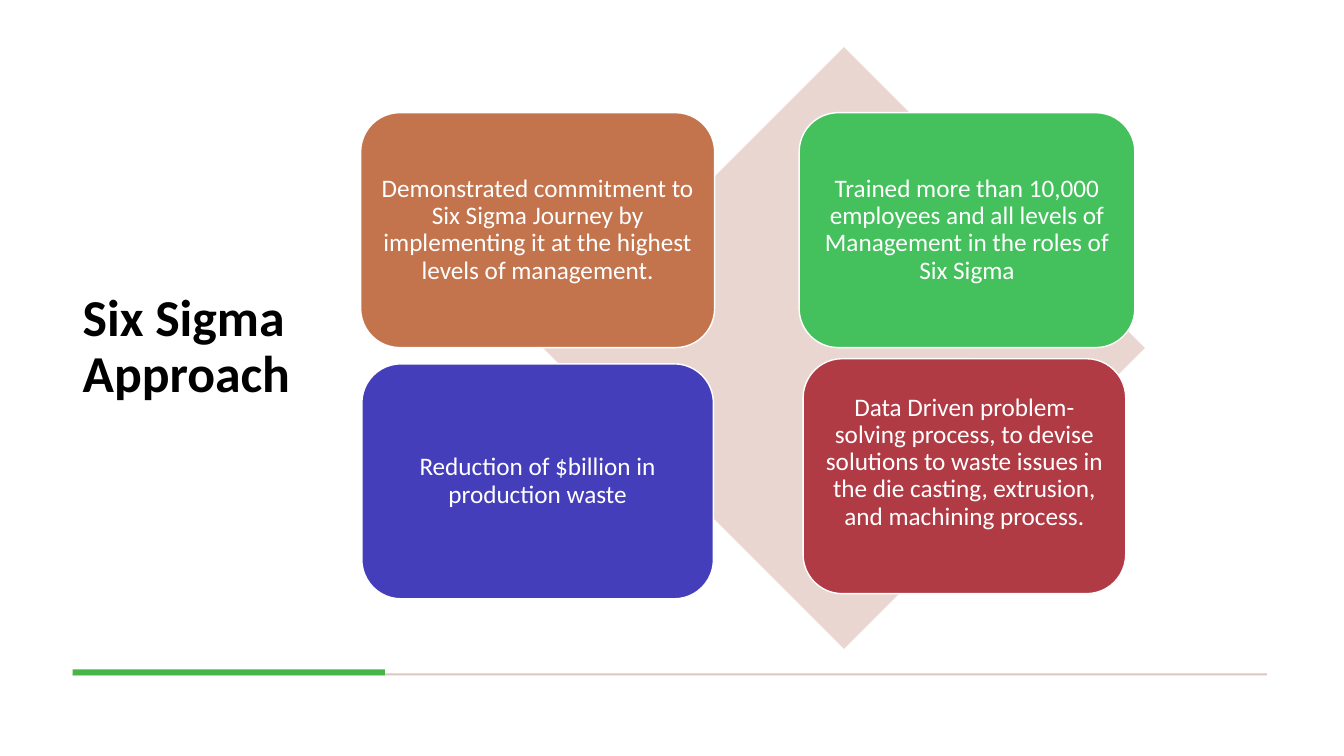
from pptx import Presentation
from pptx.dml.color import RGBColor
from pptx.enum import shapes, text
from pptx.util import Cm, Pt

FONT = "Calibri"
CARD_HEIGHT = 5.92
CARDS = [
    (9.09, 2.84, 8.92, "C3744D", 0.18,
     "Demonstrated commitment to Six Sigma Journey by implementing it "
     "at the highest levels of management."),
    (20.14, 2.84, 8.46, "44C05C", 0.18,
     "Trained more than 10,000 employees and all levels of Management "
     "in the roles of Six Sigma"),
    (9.12, 9.17, 8.86, "453EBA", 0.18,
     "Reduction of $billion in production waste"),
    (20.24, 9.04, 8.13, "B13B45", 0.87,
     "Data Driven problem-solving process, to devise solutions to waste "
     "issues in the die casting, extrusion, and machining process."),
]


def paint(color_format, value):
    """Set a colour from a hex string."""
    color_format.rgb = RGBColor.from_string(value)


def style_paragraph(para, size, color, bold=False):
    """Set the font and line spacing of a paragraph."""
    para.line_spacing = 0.9
    para.font.name = FONT
    para.font.size = Pt(size)
    para.font.bold = bold
    paint(para.font.color, color)


def add_block(page, kind, left, top, width, height, fill):
    """Add a flat filled shape without an outline, placed in centimetres."""
    block = page.shapes.add_shape(kind, Cm(left), Cm(top), Cm(width), Cm(height))
    block.shadow.inherit = False
    block.fill.solid()
    paint(block.fill.fore_color, fill)
    block.line.fill.background()
    return block


def add_card(page, left, top, width, fill, bottom_inset, wording):
    """Add a rounded card with a white outline and centred text."""
    card = add_block(page, shapes.MSO_SHAPE.ROUNDED_RECTANGLE,
                     left, top, width, CARD_HEIGHT, fill)
    card.line.width = Pt(1)
    paint(card.line.color, "FFFFFF")
    frame = card.text_frame
    frame.word_wrap = True
    frame.vertical_anchor = text.MSO_ANCHOR.MIDDLE
    frame.margin_left = frame.margin_right = frame.margin_top = Cm(0.18)
    frame.margin_bottom = Cm(bottom_inset)
    para = frame.paragraphs[0]
    para.text = wording
    para.alignment = text.PP_ALIGN.CENTER
    style_paragraph(para, 18, "FFFFFF")


def set_title(page, wording):
    """Place and format the title at the left of the slide."""
    title = page.shapes.title
    title.left, title.top = Cm(1.83), Cm(1.19)
    title.width, title.height = Cm(6.68), Cm(15.16)
    frame = title.text_frame
    frame.word_wrap = True
    frame.auto_size = text.MSO_AUTO_SIZE.NONE
    frame.vertical_anchor = text.MSO_ANCHOR.MIDDLE
    para = frame.paragraphs[0]
    para.text = wording
    para.alignment = text.PP_ALIGN.LEFT
    style_paragraph(para, 37, "000000", bold=True)


def main():
    """Build the slide and save it."""
    deck = Presentation()
    deck.slide_width, deck.slide_height = Cm(33.87), Cm(19.05)
    page = deck.slides.add_slide(deck.slide_layouts[5])
    set_title(page, "Six Sigma\vApproach")
    add_block(page, shapes.MSO_SHAPE.RECTANGLE, 1.83, 16.97, 30.1, 0.05, "DBC7BD")
    add_block(page, shapes.MSO_SHAPE.RECTANGLE, 1.83, 16.87, 7.87, 0.15, "47B547")
    add_block(page, shapes.MSO_SHAPE.DIAMOND, 13.69, 1.19, 15.16, 15.16, "E9D6D0")
    for card in CARDS:
        add_card(page, *card)
    deck.save("out.pptx")


if __name__ == "__main__":
    main()
